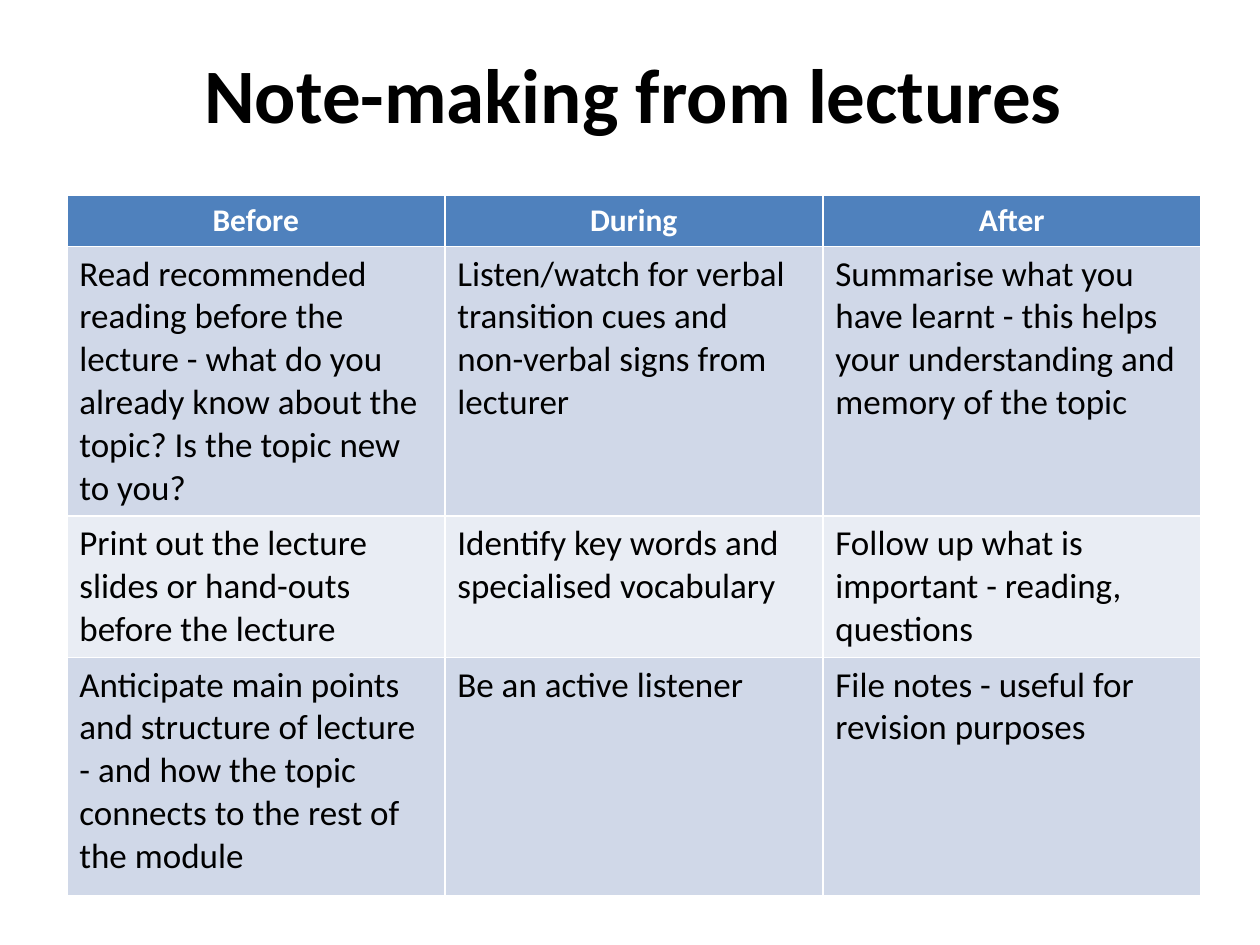
import pptx
import pptx.util
import pptx.dml.color
import pptx.enum.text

COLORS = {
    "text": "000000",
    "header_text": "FFFFFF",
    "header": "4F81BD",
    "band_dark": "D0D8E8",
    "band_light": "E9EDF4",
}
HEADINGS = ["Before", "During", "After"]
ADVICE = [
    [
        "Read recommended reading before the lecture - what do you already know about the topic? Is the topic new to you?",
        "Listen/watch for verbal transition cues and\nnon-verbal signs from lecturer",
        "Summarise what you have learnt - this helps your understanding and memory of the topic",
    ],
    [
        "Print out the lecture slides or hand-outs before the lecture",
        "Identify key words and specialised vocabulary",
        "Follow up what is important - reading, questions",
    ],
    [
        "Anticipate main points and structure of lecture - and how the topic connects to the rest of the module",
        "Be an active listener",
        "File notes - useful for revision purposes",
    ],
]
ROW_HEIGHTS = [0.4, 2.14, 1.12, 1.89]
LEFT, WIDTH = 0.53, 9


class SlideBuilder:
    font = "Calibri"

    def __init__(self, slide):
        self.slide = slide

    def color(self, name):
        return pptx.dml.color.RGBColor.from_string(COLORS[name])

    def set_text(self, text_frame, text, size, color, bold=False, centered=False):
        text_frame.text = text
        alignment = pptx.enum.text.PP_ALIGN
        for paragraph in text_frame.paragraphs:
            paragraph.alignment = alignment.CENTER if centered else alignment.LEFT
            for run in paragraph.runs:
                run.font.name = self.font
                run.font.size = pptx.util.Pt(size)
                run.font.bold = bold
                run.font.color.rgb = self.color(color)

    def title(self, text, top, height):
        shape = self.slide.shapes.title
        shape.left, shape.top, shape.width, shape.height = map(
            pptx.util.Inches, (LEFT, top, WIDTH, height))
        shape.text_frame.vertical_anchor = pptx.enum.text.MSO_ANCHOR.MIDDLE
        self.set_text(shape.text_frame, text, 44, "text", bold=True, centered=True)

    def table(self, headings, body, top, row_heights):
        rows = [headings] + body
        shape = self.slide.shapes.add_table(
            len(rows), len(headings), pptx.util.Inches(LEFT), pptx.util.Inches(top),
            pptx.util.Inches(WIDTH), pptx.util.Inches(sum(row_heights)))
        table = shape.table
        for row_index, texts in enumerate(rows):
            table.rows[row_index].height = pptx.util.Inches(row_heights[row_index])
            is_header = row_index == 0
            band = "band_dark" if row_index % 2 else "band_light"
            for column_index, text in enumerate(texts):
                cell = table.cell(row_index, column_index)
                cell.fill.solid()
                cell.fill.fore_color.rgb = self.color("header" if is_header else band)
                self.set_text(
                    cell.text_frame, text, 18 if is_header else 20,
                    "header_text" if is_header else "text",
                    bold=is_header, centered=is_header)


def main():
    presentation = pptx.Presentation()
    presentation.slide_width = pptx.util.Inches(10)
    presentation.slide_height = pptx.util.Inches(7.5)
    slide = presentation.slides.add_slide(presentation.slide_layouts[5])
    builder = SlideBuilder(slide)
    builder.title("Note-making from lectures", 0.11, 1.25)
    builder.table(HEADINGS, ADVICE, 1.55, ROW_HEIGHTS)
    presentation.save("out.pptx")


if __name__ == "__main__":
    main()
